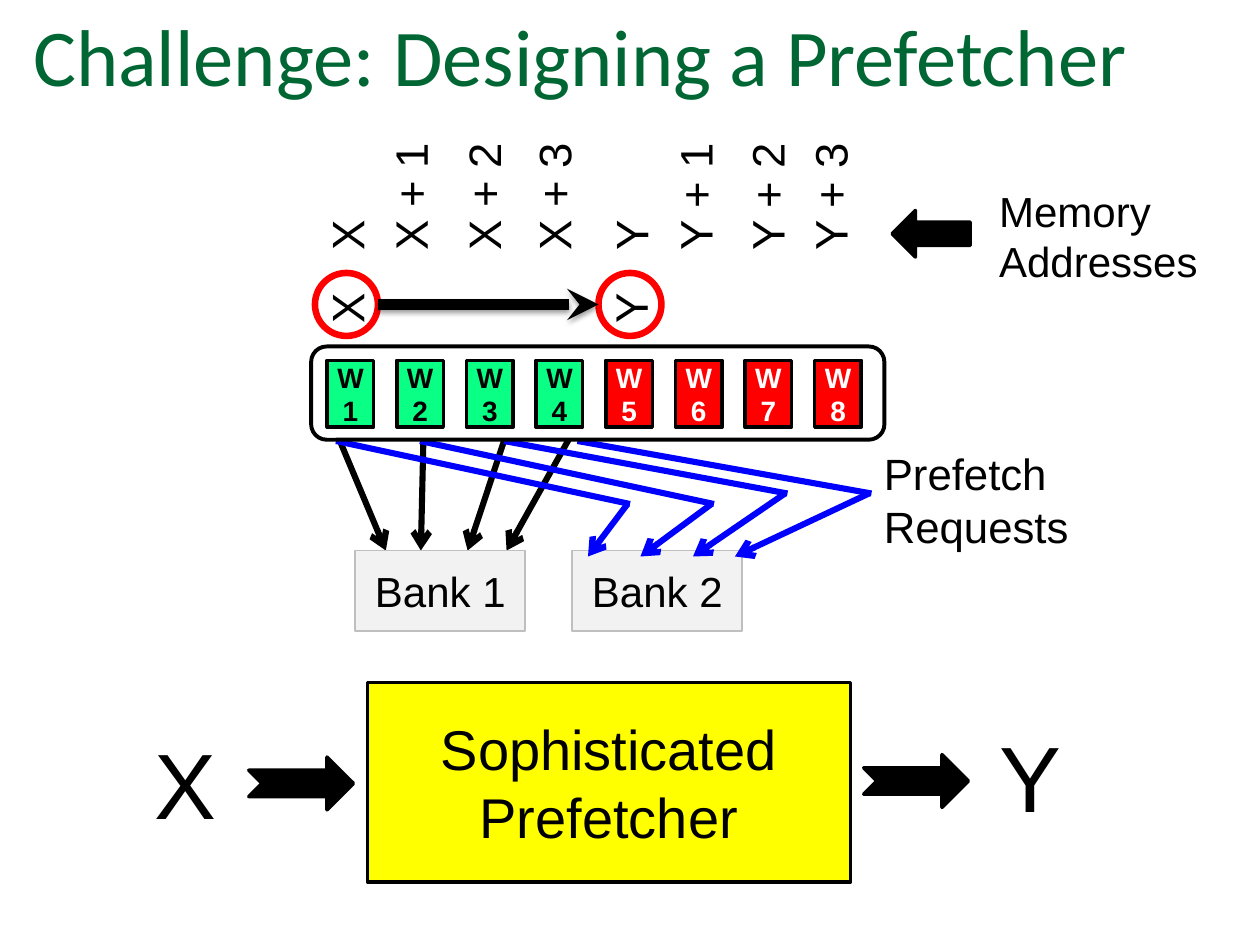
from lxml import etree
from pptx import Presentation
from pptx.dml.color import RGBColor
from pptx.enum.shapes import MSO_CONNECTOR, MSO_SHAPE
from pptx.enum.text import MSO_ANCHOR, PP_ALIGN
from pptx.oxml.ns import qn
from pptx.util import Pt

STRAIGHT = MSO_CONNECTOR.STRAIGHT
RECTANGLE = MSO_SHAPE.RECTANGLE
ROUNDED = MSO_SHAPE.ROUNDED_RECTANGLE
ELLIPSE = MSO_SHAPE.OVAL
LEFT_ARROW = MSO_SHAPE.LEFT_ARROW
NOTCHED_ARROW = MSO_SHAPE.NOTCHED_RIGHT_ARROW
LEFT, CENTER = PP_ALIGN.LEFT, PP_ALIGN.CENTER
TOP, MIDDLE = MSO_ANCHOR.TOP, MSO_ANCHOR.MIDDLE

COLORS = {
    "black": "000000", "white": "FFFFFF", "title": "006633", "green": "0AFF85",
    "red": "FF0000", "blue": "0000FF", "yellow": "FFFF00",
    "bank": "F2F2F2", "bank edge": "BFBFBF",
}
DEFAULT_INSETS = (7.2, 3.6)
TIGHT_INSETS = (3.6, 2.2)


def rgb(name):
    return RGBColor.from_string(COLORS[name])


def write(shape, text, size, color="black", font="Arial", bold=False,
          align=LEFT, anchor=TOP, insets=DEFAULT_INSETS):
    frame = shape.text_frame
    frame.word_wrap = True
    frame.vertical_anchor = anchor
    frame.margin_left = frame.margin_right = Pt(insets[0])
    frame.margin_top = frame.margin_bottom = Pt(insets[1])
    frame.text = text
    for paragraph in frame.paragraphs:
        paragraph.alignment = align
        paragraph.font.name = font
        paragraph.font.size = Pt(size)
        paragraph.font.bold = bold
        paragraph.font.color.rgb = rgb(color)


def add_text(slide, box, text, size, **style):
    shape = slide.shapes.add_textbox(*map(Pt, box))
    write(shape, text, size, **style)
    return shape


def add_box(slide, kind, box, fill, line, width):
    shape = slide.shapes.add_shape(kind, *map(Pt, box))
    shape.shadow.inherit = False
    if fill:
        shape.fill.solid()
        shape.fill.fore_color.rgb = rgb(fill)
    else:
        shape.fill.background()
    shape.line.color.rgb = rgb(line)
    shape.line.width = Pt(width)
    return shape


def add_line(slide, start, end, color, width, head=None, shadow=False):
    line = slide.shapes.add_connector(STRAIGHT, *map(Pt, (*start, *end)))
    line.line.color.rgb = rgb(color)
    line.line.width = Pt(width)
    if head:
        etree.SubElement(line.line._get_or_add_ln(), qn("a:tailEnd"), type=head)
    effects = etree.SubElement(line._element.spPr, qn("a:effectLst"))
    if shadow:
        outer = etree.SubElement(
            effects, qn("a:outerShdw"), blurRad=str(Pt(3.1)),
            dist=str(Pt(1.6)), dir="5400000", rotWithShape="0")
        shade = etree.SubElement(outer, qn("a:srgbClr"), val=COLORS["black"])
        etree.SubElement(shade, qn("a:alpha"), val="38000")


def add_upward_label(slide, center, bottom, length, text):
    """Add text that reads upward, starting at the given bottom."""
    height = 35.3
    box = (center - length / 2, bottom - length / 2 - height / 2, length, height)
    add_text(slide, box, text, 26, insets=TIGHT_INSETS).rotation = 270


def add_title(slide, box):
    add_text(slide, box, "Challenge: Designing a Prefetcher", 46,
             color="title", font="Calibri")


def add_addresses(slide, box):
    left, top, width, height = box
    centers = (19.8, 56.2, 98, 138.2, 182.2, 218.9, 260, 296)
    names = [base + step for base in "XY" for step in ("", " + 1", " + 2", " + 3")]
    for center, name in zip(centers, names):
        add_upward_label(slide, left + center, top + height, 75, name)
    add_box(slide, LEFT_ARROW, (left + 332, top + 48.5, 44.6, 26.6),
            "black", "black", 2)
    add_text(slide, (left + 386, top + 30.4, width - 386, 65.5),
             "Memory Addresses", 24)


def add_jump(slide, box):
    """Add the circled X and Y and the arrow between them."""
    left, top, width, diameter = box
    for name, circle_left in (("X", left), ("Y", left + width - diameter)):
        add_upward_label(slide, circle_left + diameter / 2 - 0.4,
                         top + 32.4, 57, name)
        add_box(slide, ELLIPSE, (circle_left, top, diameter, diameter),
                None, "red", 3.75)
    middle = top + diameter / 2
    add_line(slide, (left + diameter, middle), (left + width - diameter, middle),
             "black", 6, "stealth", shadow=True)


def add_bank_accesses(slide, box):
    left, top, width, height = box
    bank_top = top + 65.6
    for start, end in ((1, 28.5), (97, 75.2), (134.2, 97.5), (50, 48.5)):
        add_line(slide, (left + start, top), (left + end, bank_top),
                 "black", 3.5, "arrow")
    for number, bank_left in ((1, 11), (2, 135)):
        bank = add_box(slide, RECTANGLE, (left + bank_left, bank_top, 97.2, 46),
                       "bank", "bank edge", 1)
        write(bank, f"Bank {number}", 24, align=CENTER, anchor=MIDDLE, insets=(0, 0))
    prefetches = (  # start x, turn x, turn y, end x
        (0, 168, 39, 144), (48, 216, 39, 174), (96, 258, 33, 204), (138, 306, 33, 228))
    for start, turn, drop, _ in prefetches:
        add_line(slide, (left + start, top + 3), (left + turn, top + drop),
                 "blue", 3.5)
    for _, turn, drop, end in prefetches:
        add_line(slide, (left + turn - 1.4, top + drop), (left + end, top + 69),
                 "blue", 3.5, "arrow")
    add_text(slide, (left + 306, top + 3, width - 306, 67.7),
             "Prefetch\nRequests", 25)


def add_warps(slide, box):
    left, top, width, height = box
    add_box(slide, ROUNDED, box, "white", "black", 2.25)
    for index in range(8):
        fill, color = ("green", "black") if index < 4 else ("red", "white")
        warp = add_box(slide, RECTANGLE,
                       (left + 9.2 + index * 39.8, top + 7.9, 26.6, 38.2),
                       fill, "black", 2)
        write(warp, f"W{index + 1}", 16, color=color, bold=True,
              align=CENTER, anchor=MIDDLE, insets=TIGHT_INSETS)


def add_prefetcher(slide, box):
    left, top, width, height = box
    add_text(slide, (left, top + 21.8, 138, 71.3), "X", 53)
    block = add_box(slide, RECTANGLE, (left + 129, top, 276, height),
                    "yellow", "black", 2)
    write(block, "Sophisticated Prefetcher", 32, align=CENTER, anchor=MIDDLE)
    for arrow_left, arrow_top in ((61.2, 42.6), (412.6, 41.2)):
        add_box(slide, NOTCHED_ARROW, (left + arrow_left, top + arrow_top, 59.8, 30.2),
                "black", "black", 2)
    add_text(slide, (left + width - 138, top + 18, 138, 71.3), "Y", 53)


def main():
    presentation = Presentation()
    presentation.slide_width, presentation.slide_height = Pt(720), Pt(540)
    slide = presentation.slides.add_slide(presentation.slide_layouts[6])
    add_addresses(slide, (177.8, 71.8, 524.2, 74.8))
    add_title(slide, (12, 0, 678, 60))
    add_bank_accesses(slide, (192, 249, 528, 112))
    add_warps(slide, (177.8, 198, 327.6, 53.3))
    add_jump(slide, (180, 156, 198, 36))
    add_prefetcher(slide, (81, 390, 621, 114))
    presentation.save("out.pptx")


if __name__ == "__main__":
    main()
